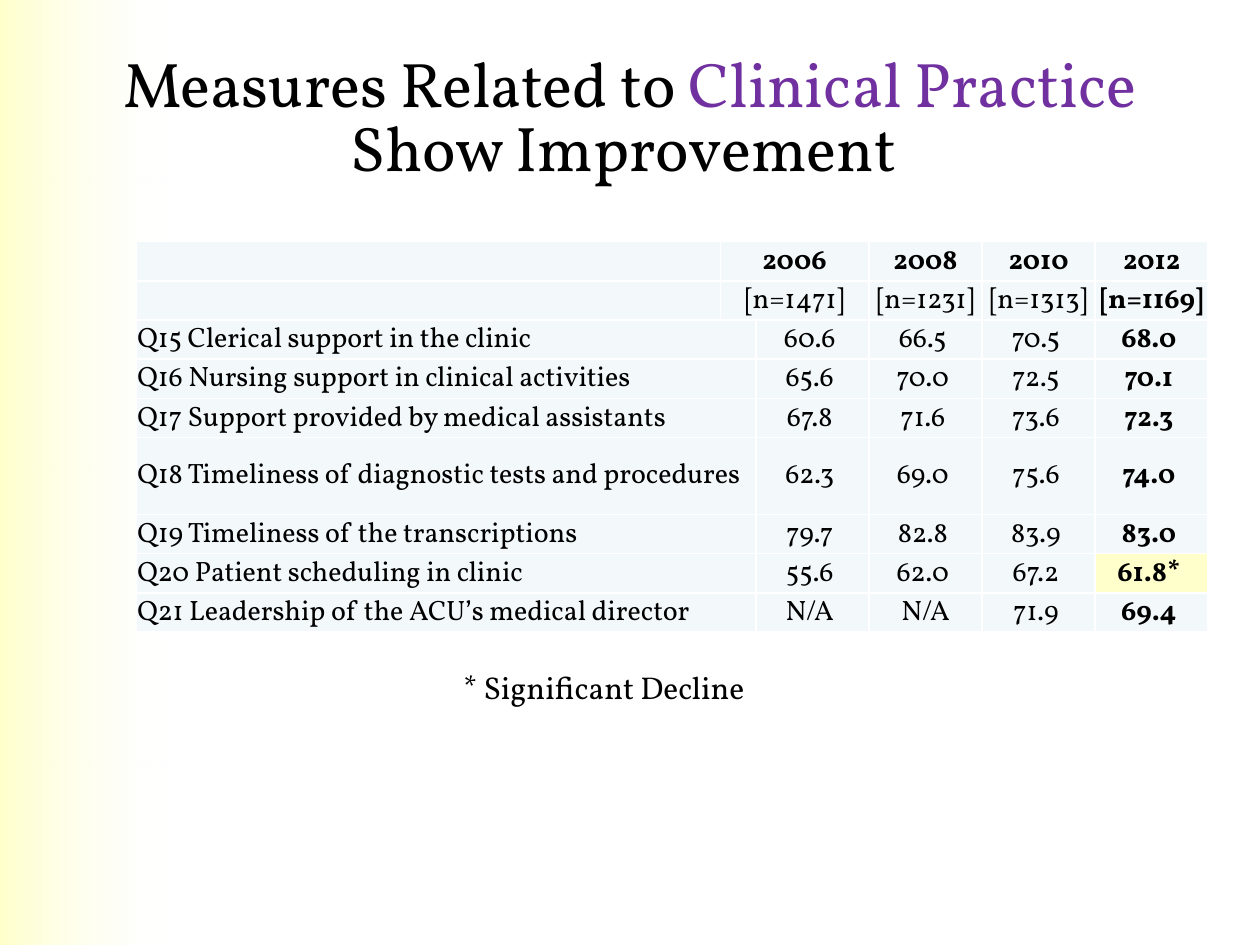
import pptx
import pptx.dml.color
import pptx.enum.shapes
import pptx.enum.text
import pptx.oxml
import pptx.oxml.ns
import pptx.util
from lxml import etree

Cm, Pt = pptx.util.Cm, pptx.util.Pt
ALIGN, ANCHOR = pptx.enum.text.PP_ALIGN, pptx.enum.text.MSO_ANCHOR
qn = pptx.oxml.ns.qn

FONT = "Vollkorn"
COLORS = {
    "text": "000000", "accent": "7030A0", "cell": "F3F9FA", "border": "FFFFFF",
    "highlight": "FFFFCC", "fade": "FFFFF4",
}
TITLE = [("Measures Related to ", "text"), ("Clinical Practice ", "accent"),
         ("Show Improvement ", "text")]
FOOTNOTE = "* Significant Decline"
HEADERS = [
    ("", "2006", "2008", "2010", "2012"),
    ("", "[n=1471]", "[n=1231]", "[n=1313]", "[n=1169]"),
]
MEASURES = [
    ("Q15 Clerical support in the clinic", "60.6 ", "66.5 ", "70.5 ", "68.0 "),
    ("Q16 Nursing support in clinical activities", "65.6 ", "70.0 ", "72.5 ", "70.1 "),
    ("Q17 Support provided by medical assistants", "67.8 ", "71.6 ", "73.6 ", "72.3 "),
    ("Q18 Timeliness of diagnostic tests and procedures", "62.3 ", "69.0 ", "75.6 ", "74.0 "),
    ("Q19 Timeliness of the transcriptions", "79.7 ", "82.8 ", "83.9 ", "83.0 "),
    ("Q20 Patient scheduling in clinic", "55.6 ", "62.0 ", "67.2 ", "61.8* "),
    ("Q21 Leadership of the ACU’s medical director", "N/A ", "N/A", "71.9 ", "69.4 "),
]
COL_WIDTHS = [11.77, 0.72] + [2.28] * 4
ROW_HEIGHT, TALL_ROW_HEIGHT, TALL_ROW = 0.79, 1.55, 5


def rgb(name):
    return pptx.dml.color.RGBColor.from_string(COLORS[name])


def style_run(r, size, color="text", bold=False):
    r.font.name, r.font.size, r.font.bold = FONT, Pt(size), bold
    r.font.color.rgb = rgb(color)


def add_borders(cell):
    tcPr = cell._tc.get_or_add_tcPr()
    for i, side in enumerate(("lnL", "lnR", "lnT", "lnB")):
        ln = etree.Element(qn(f"a:{side}"), w=str(Pt(1)))
        fill = etree.SubElement(ln, qn("a:solidFill"))
        etree.SubElement(fill, qn("a:srgbClr"), val=COLORS["border"])
        tcPr.insert(i, ln)


def add_side_band(s):
    band = s.shapes.add_shape(pptx.enum.shapes.MSO_SHAPE.RECTANGLE,
                              0, 0, Cm(3.39), Cm(19.05))
    band.shadow.inherit = False
    band.line.fill.background()
    band.fill.gradient()
    band.fill.gradient_angle = 0
    for stop, color, position in zip(band.fill.gradient_stops,
                                     ("highlight", "fade"), (0, 1)):
        stop.color.rgb = rgb(color)
        stop.position = position
    clear_end = band._element.spPr.findall(".//" + qn("a:srgbClr"))[-1]
    etree.SubElement(clear_end, qn("a:alpha"), val="0")


def add_title(s):
    tf = s.shapes.add_textbox(Cm(1.27), Cm(0.84), Cm(22.86), Cm(3.18)).text_frame
    tf.word_wrap = True
    tf.vertical_anchor = ANCHOR.MIDDLE
    p = tf.paragraphs[0]
    p.alignment = ALIGN.CENTER
    p.line_spacing = 0.85
    for text, color in TITLE:
        r = p.add_run()
        r.text = text
        style_run(r, 36, color)


def add_measures_table(s):
    rows = HEADERS + MEASURES
    heights = [TALL_ROW_HEIGHT if i == TALL_ROW else ROW_HEIGHT for i in range(len(rows))]
    table = s.shapes.add_table(len(rows), len(COL_WIDTHS), Cm(2.75), Cm(4.87),
                               Cm(sum(COL_WIDTHS)), Cm(sum(heights))).table
    table.first_row = table.horz_banding = False
    for column, width in zip(table.columns, COL_WIDTHS):
        column.width = Cm(width)
    for row, height in zip(table.rows, heights):
        row.height = Cm(height)

    for i, row in enumerate(rows):
        is_header = i < len(HEADERS)
        for cell in table.rows[i].cells:
            cell.fill.solid()
            cell.fill.fore_color.rgb = rgb("cell")
            cell.margin_left = cell.margin_right = cell.margin_top = Cm(0.02)
            cell.margin_bottom = 0
            cell.vertical_anchor = ANCHOR.BOTTOM if is_header else ANCHOR.MIDDLE
            add_borders(cell)
        # The narrow second column belongs to 2006 in headers, to the label below
        start = 1 if is_header else 0
        table.cell(i, start).merge(table.cell(i, start + 1))
        columns = (0, 1, 3, 4, 5) if is_header else (0, 2, 3, 4, 5)
        for j, text in zip(columns, row):
            if not text:
                continue
            cell = table.cell(i, j)
            cell.text_frame.text = text
            p = cell.text_frame.paragraphs[0]
            p.alignment = ALIGN.CENTER if j else ALIGN.LEFT
            style_run(p.runs[0], 16, bold=i == 0 or j == 5)
            if "*" in text:
                cell.fill.fore_color.rgb = rgb("highlight")


def add_footnote(s):
    tf = s.shapes.add_textbox(Cm(9.09), Cm(13.34), Cm(6.25), Cm(1.02)).text_frame
    tf.word_wrap = False
    tf.text = FOOTNOTE
    style_run(tf.paragraphs[0].runs[0], 18)


def main():
    prs = pptx.Presentation()
    prs.slide_width, prs.slide_height = Cm(25.4), Cm(19.05)
    s = prs.slides.add_slide(prs.slide_layouts[6])
    add_side_band(s)
    add_title(s)
    add_measures_table(s)
    add_footnote(s)
    prs.save("out.pptx")


if __name__ == "__main__":
    main()
